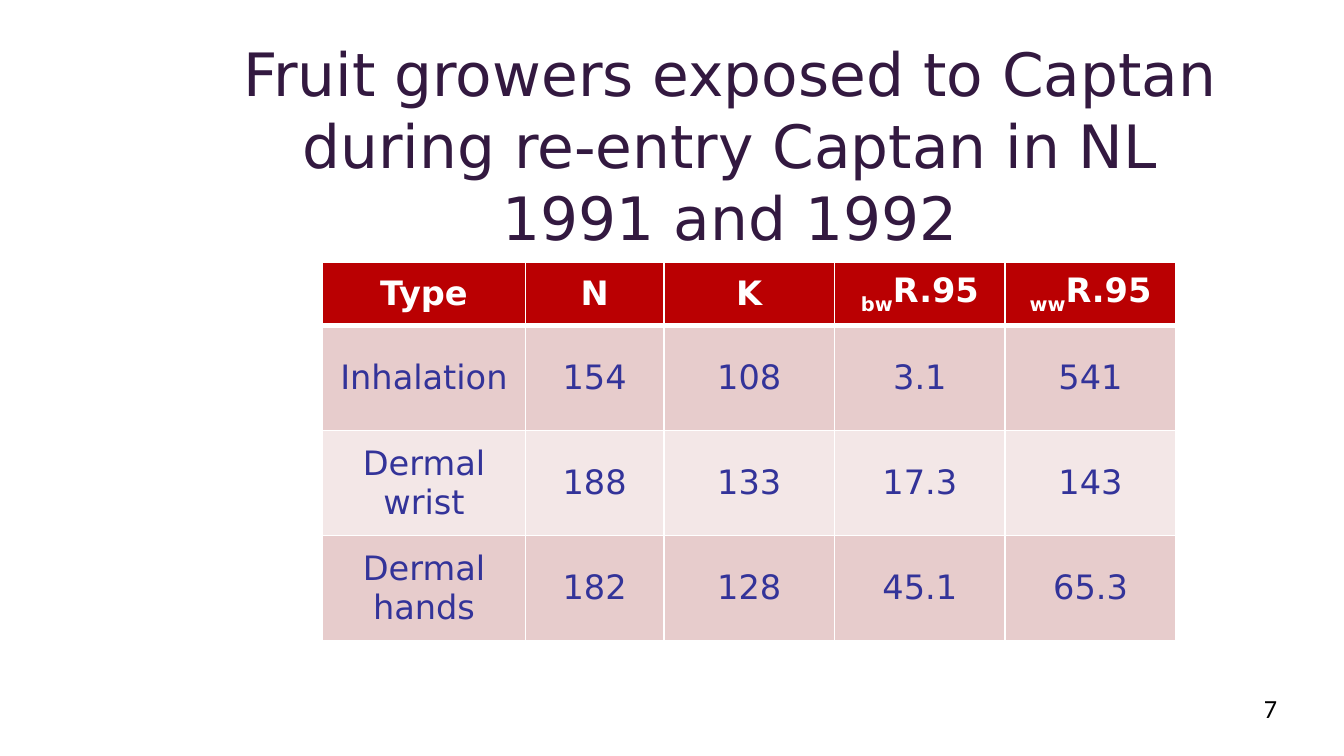
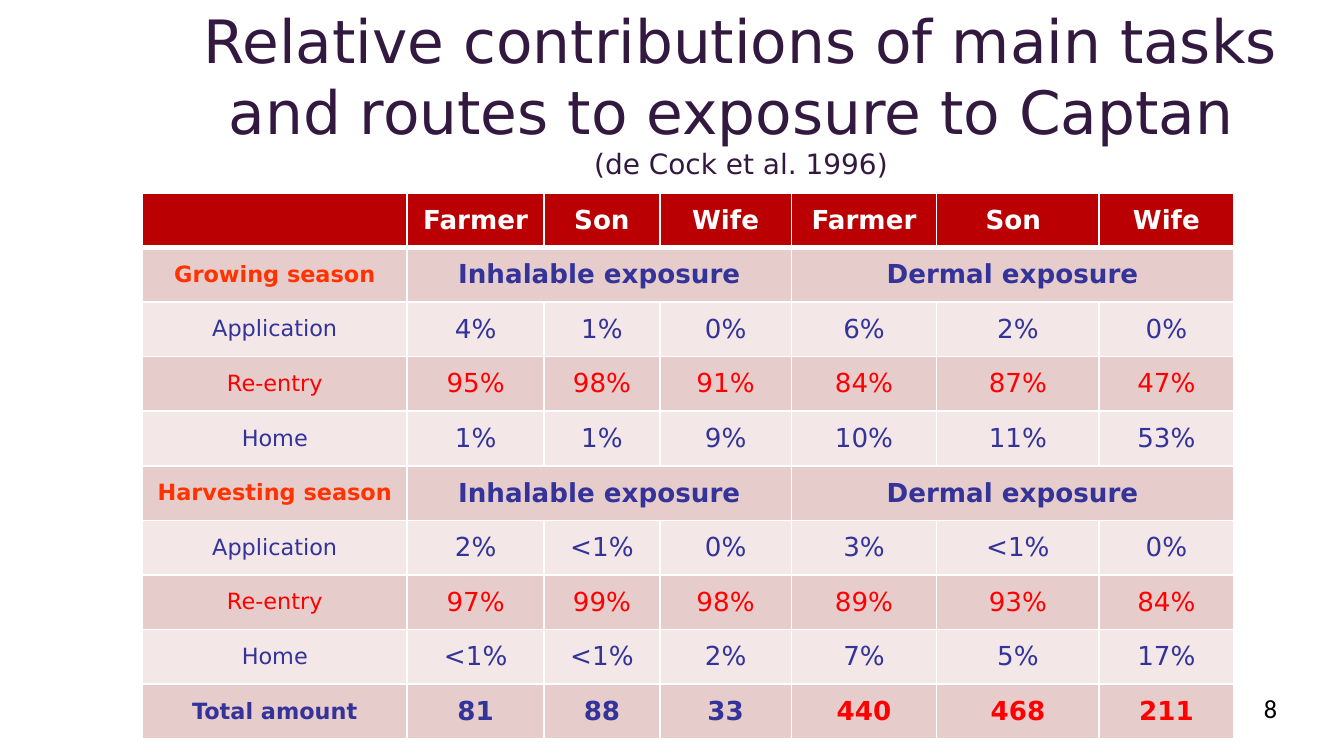
"""Build two slides with tables about exposure of fruit growers to Captan."""
from lxml import etree
from pptx import Presentation
from pptx import util as u
from pptx.dml.color import RGBColor
from pptx.enum import text
from pptx.oxml.ns import qn

COLORS = {"title": "331940", "number": "000000", "header": "BA0002", "white": "FFFFFF",
          "dark band": "E7CCCC", "light band": "F3E7E7",
          "body": "333399", "season": "FF3300", "highlight": "FF0000"}
SEASONS = ("Growing season", "Harvesting season ")
EXPOSURES = ["Inhalable exposure", "", "", "Dermal exposure", "", ""]

SLIDES = [
    {"number": 7, "title_box": (1.61, 0.21, 7.65, 1.73),
     "title": "Fruit growers exposed to Captan during re-entry Captan in NL 1991 and 1992",
     "source": None,
     "table_box": (2.4, 1.95, 6.35, 2.82), "header_height": 0.47,
     "columns": [1.51, 1.03, 1.27, 1.27, 1.27],
     "label_size": 18, "value_size": 18, "margin": 0.04,
     "rows": [["Type", "N", "K", ("bw", "R.95"), ("ww", "R.95")],
              ["Inhalation", "154", "108", "3.1", "541"],
              ["Dermal wrist", "188", "133", "17.3", "143"],
              ["Dermal hands", "182", "128", "45.1", "65.3"]]},
    {"number": 8, "title_box": (1.38, 0.03, 8.27, 1.31),
     "title": "Relative contributions of main tasks and routes to exposure to Captan ",
     "source": "(de Cock et al. 1996)",
     "table_box": (1.06, 1.44, 8.12, 4.06), "header_height": 0.4,
     "columns": [1.97, 1.02, 0.86, 0.98, 1.08, 1.21, 1],
     "label_size": 12, "value_size": 14, "margin": 0.03,
     "rows": [["", "Farmer", "Son", "Wife", "Farmer", "Son ", "Wife"],
              [SEASONS[0], *EXPOSURES],
              ["Application", "4%", "1%", "0%", "6%", "2%", "0%"],
              ["Re-entry", "95%", "98%", "91%", "84%", "87%", "47%"],
              ["Home", "1%", "1%", "9%", "10%", "11%", "53%"],
              [SEASONS[1], *EXPOSURES],
              ["Application", "2%", "<1%", "0%", "3%", "<1%", "0%"],
              ["Re-entry", "97%", "99%", "98%", "89%", "93%", "84%"],
              ["Home", "<1%", "<1%", "2%", "7%", "5%", "17%"],
              ["Total amount", "81", "88", "33", "440", "468", "211"]]},
]


def add_run(paragraph, words, color, **formats):
    """Add a run with the given colour and font values."""
    run = paragraph.add_run()
    run.text = words
    for name, value in {"name": "DejaVu Sans", **formats}.items():
        setattr(run.font, name, value)
    run.font.color.rgb = RGBColor.from_string(COLORS[color])
    return run


def add_text_box(slide, box, alignment, anchor):
    """Add a wrapped text box and return its paragraph."""
    frame = slide.shapes.add_textbox(*map(u.Inches, box)).text_frame
    frame.word_wrap = True
    frame.vertical_anchor = anchor
    frame.paragraphs[0].alignment = alignment
    return frame.paragraphs[0]


presentation = Presentation()
presentation.slide_width = u.Inches(10)
presentation.slide_height = u.Inches(10) * 9 // 16

for content in SLIDES:
    slide = presentation.slides.add_slide(presentation.slide_layouts[6])
    number = add_text_box(slide, (7.52, 5.1, 2.08, 0.38),
                          text.PP_ALIGN.RIGHT, text.MSO_ANCHOR.TOP)
    add_run(number, str(content["number"]), "number", name="Calibri", size=u.Pt(14))

    title = add_text_box(slide, content["title_box"],
                         text.PP_ALIGN.CENTER, text.MSO_ANCHOR.MIDDLE)
    add_run(title, content["title"], "title", size=u.Pt(32))
    if content["source"]:
        title.add_line_break()
        add_run(title, content["source"], "title", size=u.Pt(15))

    rows, columns = content["rows"], content["columns"]
    box = content["table_box"]
    table = slide.shapes.add_table(len(rows), len(columns), *map(u.Inches, box)).table
    for column, width in zip(table.columns, columns):
        column.width = u.Inches(width)
    header_height = content["header_height"]
    body_height = (box[3] - header_height) / (len(rows) - 1)

    for row_index, row in enumerate(rows):
        is_header = row_index == 0
        is_season = row[0] in SEASONS
        is_total = row[0] == "Total amount"
        table.rows[row_index].height = u.Inches(header_height if is_header else body_height)
        band = "header" if is_header else "dark band" if row_index % 2 else "light band"

        for column_index, words in enumerate(row):
            cell = table.cell(row_index, column_index)
            properties = cell._tc.get_or_add_tcPr()
            widths = {"a:lnL": 1, "a:lnR": 1, "a:lnT": 3 if row_index == 1 else 1,
                      "a:lnB": 3 if is_header else 1}
            for side, width in widths.items():
                line = etree.SubElement(properties, qn(side), w=str(u.Pt(width)))
                fill = etree.SubElement(line, qn("a:solidFill"))
                etree.SubElement(fill, qn("a:srgbClr"), val=COLORS["white"])
            cell.fill.solid()
            cell.fill.fore_color.rgb = RGBColor.from_string(COLORS[band])
            cell.vertical_anchor = text.MSO_ANCHOR.MIDDLE
            cell.margin_left = cell.margin_right = u.Inches(0.09)
            cell.margin_top = cell.margin_bottom = u.Inches(content["margin"])
            if not words:
                continue

            is_label = column_index == 0
            color = "body"
            if is_header:
                color = "white"
            elif is_season and is_label:
                color = "season"
            elif row[0] == "Re-entry" or (is_total and column_index > 3):
                color = "highlight"
            size = u.Pt(content["label_size" if is_label else "value_size"])
            paragraph = cell.text_frame.paragraphs[0]
            paragraph.alignment = text.PP_ALIGN.CENTER
            formats = {"size": size, "bold": is_header or is_season or is_total}
            if isinstance(words, tuple):
                subscript, words = words
                run = add_run(paragraph, subscript, color, **formats)
                run.font._element.set("baseline", "-25000")
            add_run(paragraph, words, color, **formats)

        if is_season:
            for first in (1, 4):
                table.cell(row_index, first).merge(table.cell(row_index, first + 2))

presentation.save("out.pptx")
